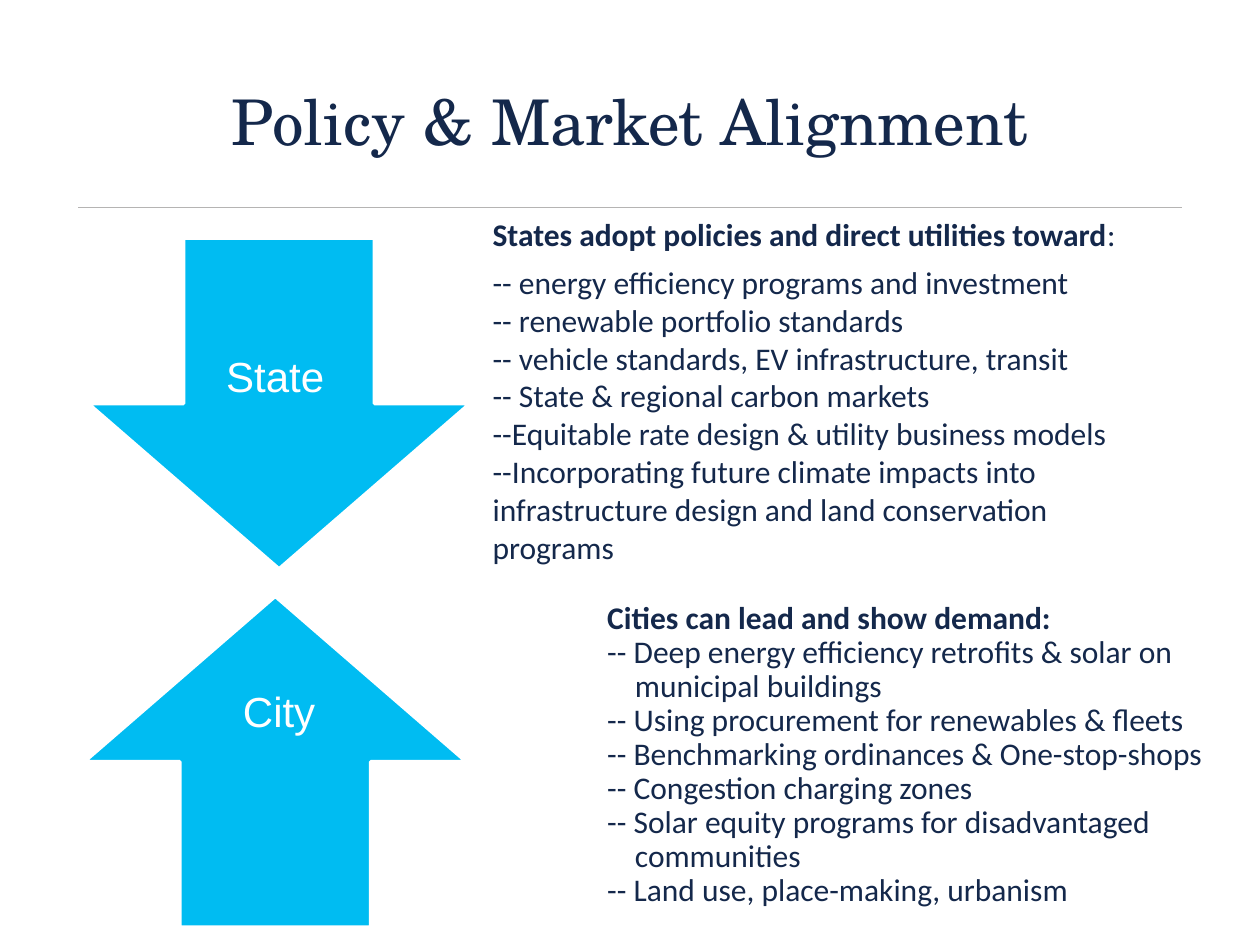
import pptx
import pptx.util
import pptx.dml.color
import pptx.enum.shapes
import pptx.enum.text
import lxml.etree
from collections import namedtuple

Box = namedtuple("Box", "left top width height")
Inches = pptx.util.Inches
Pt = pptx.util.Pt
Align = pptx.enum.text.PP_ALIGN
Anchor = pptx.enum.text.MSO_ANCHOR
Preset = pptx.enum.shapes.MSO_SHAPE

WIDTH, HEIGHT = 10, 7.5
COLORS = {"navy": "14284B", "sky": "00BCF2", "white": "FFFFFF", "rule": "B5B4B3"}

STATE_ITEMS = [
    "-- energy efficiency programs and investment",
    "-- renewable portfolio standards",
    "-- vehicle standards, EV infrastructure, transit",
    "-- State & regional carbon markets",
    "--Equitable rate design & utility business models",
    "--Incorporating future climate impacts into infrastructure design "
    "and land conservation programs",
]
CITY_ITEMS = [
    "-- Deep energy efficiency retrofits & solar on municipal buildings",
    "-- Using procurement for renewables & fleets",
    "-- Benchmarking ordinances & One-stop-shops",
    "-- Congestion charging zones",
    "-- Solar equity programs for disadvantaged communities",
    "-- Land use, place-making, urbanism",
]


def rgb(name):
    """Return the named colour."""
    return pptx.dml.color.RGBColor.from_string(COLORS[name])


def share(left, top, width, height):
    """Turn shares of the slide into a box in inches."""
    return Box(left * WIDTH, top * HEIGHT, width * WIDTH, height * HEIGHT)


def add_run(paragraph, text, font, size, color, bold=False):
    """Add one formatted run to a paragraph."""
    run = paragraph.add_run()
    run.text = text
    run.font.name = font
    run.font.size = Pt(size)
    run.font.bold = bold
    run.font.color.rgb = rgb(color)


def add_text_frame(slide, box, anchor, margins):
    """Add a wrapping text box and return its text frame."""
    shape = slide.shapes.add_textbox(*(Inches(length) for length in box))
    frame = shape.text_frame
    frame.word_wrap = True
    frame.vertical_anchor = anchor
    frame.margin_left, frame.margin_top, frame.margin_right, frame.margin_bottom = (
        Inches(margin) for margin in margins)
    return frame


def add_heading(slide, box):
    """Place the slide title in the box with a rule along its bottom edge."""
    title = Box(box.left, box.top, box.width, box.height * 0.72)
    frame = add_text_frame(slide, title, Anchor.MIDDLE, [0.1] * 4)
    paragraph = frame.paragraphs[0]
    paragraph.alignment = Align.CENTER
    paragraph.line_spacing = Pt(35.2)
    add_run(paragraph, "Policy & Market Alignment", "TeX Gyre Schola", 36, "navy")
    bottom = Inches(box.top + box.height)
    rule = slide.shapes.add_connector(
        pptx.enum.shapes.MSO_CONNECTOR.STRAIGHT,
        Inches(box.left), bottom, Inches(box.left + box.width), bottom)
    rule.line.color.rgb = rgb("rule")
    rule.line.width = Pt(0.5)
    lxml.etree.SubElement(rule._element.spPr, pptx.oxml.ns.qn("a:effectLst"))


def add_arrow(slide, box, preset, label, label_center):
    """Fill the box with a block arrow and centre its label at the given share."""
    arrow = slide.shapes.add_shape(preset, *(Inches(length) for length in box))
    arrow.shadow.inherit = False
    arrow.fill.solid()
    arrow.fill.fore_color.rgb = rgb("sky")
    arrow.line.color.rgb = rgb("white")
    arrow.line.width = Pt(2)
    width, height = 1.3, 0.5
    label_box = Box(box.left + box.width * label_center[0] - width / 2,
                    box.top + box.height * label_center[1] - height / 2, width, height)
    frame = add_text_frame(slide, label_box, Anchor.TOP, [0.1, 0.05, 0.1, 0.05])
    paragraph = frame.paragraphs[0]
    paragraph.alignment = Align.CENTER
    add_run(paragraph, label, "Arial", 24, "white")


def add_points(slide, box, heading, items, spacing, space_after=0, hanging=0, suffix=""):
    """Place a bold heading and its list of points in the box."""
    frame = add_text_frame(slide, box, Anchor.TOP, [0.16, 0, 0.16, 0])
    paragraph = frame.paragraphs[0]
    paragraph.line_spacing = 0.9
    paragraph.space_after = Pt(space_after)
    add_run(paragraph, heading, "Calibri", 18, "navy", bold=True)
    if suffix:
        add_run(paragraph, suffix, "Calibri", 18, "navy")
    for item in items:
        paragraph = frame.add_paragraph()
        paragraph.line_spacing = spacing
        if hanging:
            properties = paragraph._p.get_or_add_pPr()
            properties.set("marL", str(Inches(hanging)))
            properties.set("indent", str(-Inches(hanging)))
        add_run(paragraph, item, "Calibri", 18, "navy")


def main():
    """Build and save the slide."""
    presentation = pptx.Presentation()
    presentation.slide_width = Inches(WIDTH)
    presentation.slide_height = Inches(HEIGHT)
    slide = presentation.slides.add_slide(presentation.slide_layouts[6])
    add_heading(slide, share(0.062, 0.087, 0.876, 0.133))
    add_arrow(slide, share(0.07, 0.252, 0.303, 0.35), Preset.DOWN_ARROW,
              "State", (0.49, 0.415))
    add_points(slide, share(0.375, 0.232, 0.563, 0.38),
               "States adopt policies and direct utilities toward", STATE_ITEMS,
               1.0, space_after=5.5, suffix=":")
    add_arrow(slide, share(0.067, 0.631, 0.303, 0.35), Preset.UP_ARROW,
              "City", (0.51, 0.346))
    add_points(slide, share(0.466, 0.637, 0.514, 0.34),
               "Cities can lead and show demand:", CITY_ITEMS, 0.9, hanging=0.22)
    presentation.save("out.pptx")


if __name__ == "__main__":
    main()
